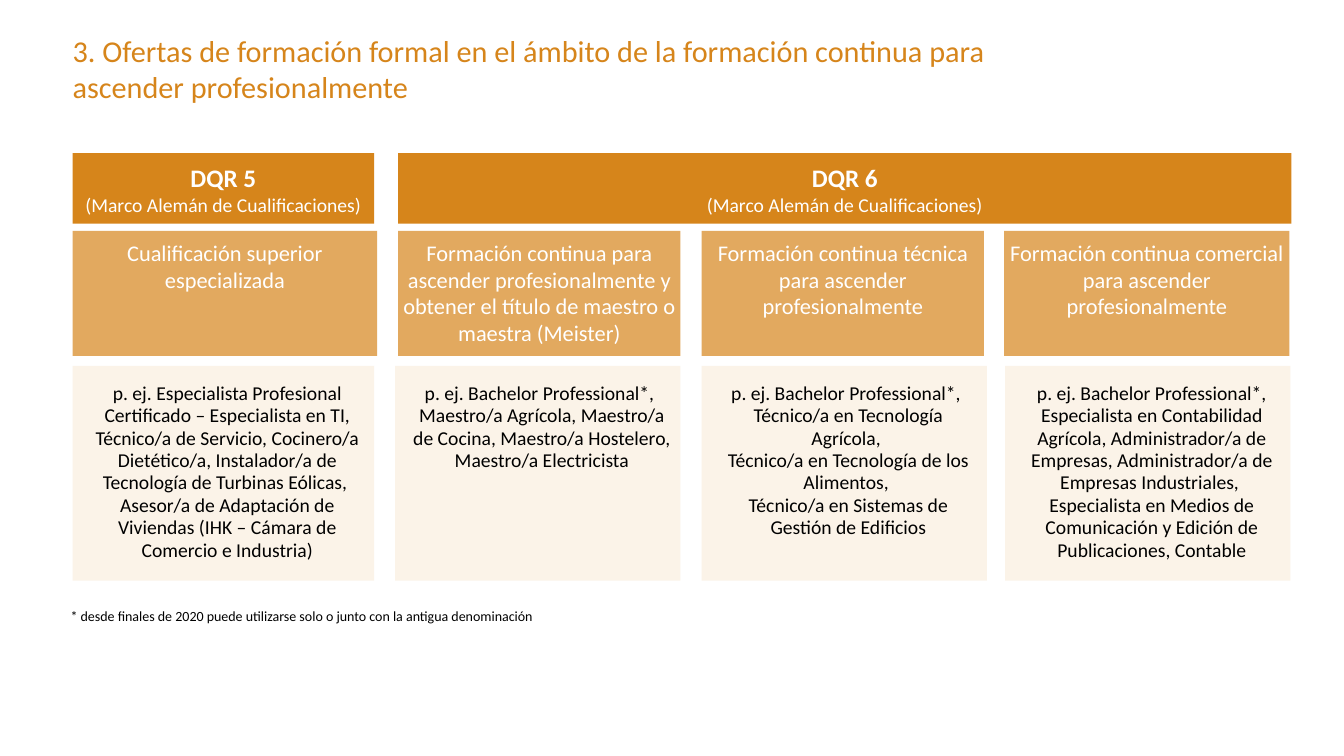
"""Builds the slide on formal training offers by DQR level."""
from pptx import Presentation
from pptx.dml.color import RGBColor
from pptx.enum.shapes import MSO_SHAPE
from pptx.enum.text import MSO_ANCHOR, PP_ALIGN
from pptx.util import Inches, Pt

RECT = MSO_SHAPE.RECTANGLE
TOP, MIDDLE = MSO_ANCHOR.TOP, MSO_ANCHOR.MIDDLE
LEFT, CENTER = PP_ALIGN.LEFT, PP_ALIGN.CENTER
ORANGE = RGBColor(0xD6, 0x85, 0x1B)
AMBER = RGBColor(0xE2, 0xA9, 0x5F)
CREAM = RGBColor(0xFB, 0xF3, 0xE8)
WHITE = RGBColor(0xFF, 0xFF, 0xFF)
BLACK = RGBColor(0, 0, 0)

TITLE = ("3. Ofertas de formación formal en el ámbito de la formación "
         "continua para ascender profesionalmente")
NOTE = ("* desde finales de 2020 puede utilizarse solo o junto con la "
        "antigua denominación")
LEVELS = [("DQR 5", 0.72, 2.99), ("DQR 6", 3.95, 8.86)]
FRAME = "(Marco Alemán de Cualificaciones)"
TRACKS = [
    ((0.72, 3.02), (0.72, 2.99),
     "Cualificación superior especializada",
     "p. ej. Especialista Profesional Certificado – Especialista en TI, "
     "Técnico/a de Servicio, Cocinero/a Dietético/a, Instalador/a de "
     "Tecnología de Turbinas Eólicas, \nAsesor/a de Adaptación de Viviendas "
     "(IHK – Cámara de Comercio e Industria)"),
    ((3.95, 2.8), (3.92, 2.83),
     "Formación continua para ascender profesionalmente y obtener el título "
     "de maestro o maestra (Meister)",
     "p. ej. Bachelor Professional*, \nMaestro/a Agrícola, Maestro/a de "
     "Cocina, Maestro/a Hostelero, Maestro/a Electricista"),
    ((6.96, 2.8), (6.96, 2.83),
     "Formación continua técnica para ascender profesionalmente",
     "p. ej. Bachelor Professional*, \nTécnico/a en Tecnología Agrícola, \n"
     "Técnico/a en Tecnología de los Alimentos, \n"
     "Técnico/a en Sistemas de Gestión de Edificios"),
    ((9.96, 2.83), (9.97, 2.83),
     "Formación continua comercial para ascender profesionalmente",
     "p. ej. Bachelor Professional*, Especialista en Contabilidad Agrícola, "
     "Administrador/a de Empresas, Administrador/a de Empresas Industriales, "
     "\nEspecialista en Medios de Comunicación y Edición de Publicaciones, "
     "Contable"),
]


def write(shape, text, size, color, inset, align=CENTER, anchor=TOP, pitch=None):
    """Put one paragraph into a shape and return its runs."""
    frame = shape.text_frame
    frame.word_wrap = True
    frame.vertical_anchor = anchor
    (frame.margin_left, frame.margin_top,
     frame.margin_right, frame.margin_bottom) = map(Inches, inset)
    para = frame.paragraphs[0]
    para.text = text
    para.alignment = align
    if pitch:
        para.line_spacing = Pt(pitch)
    for run in para.runs:
        run.font.name = "Calibri"
        run.font.size = Pt(size)
        run.font.color.rgb = color
    return para.runs


def panel(slide, box, fill):
    """Add a plain filled rectangle."""
    shape = slide.shapes.add_shape(RECT, *map(Inches, box))
    shape.shadow.inherit = False
    shape.fill.solid()
    shape.fill.fore_color.rgb = fill
    shape.line.fill.background()
    return shape


def label(slide, box, text, size, color, inset):
    """Add a left-aligned text box."""
    shape = slide.shapes.add_textbox(*map(Inches, box))
    write(shape, text, size, color, inset, LEFT)


def level(slide, box, name):
    """Add the bar that names a DQR level."""
    runs = write(panel(slide, box, ORANGE), f"{name}\n{FRAME}", 14, WHITE,
                 (0.04, 0.08, 0.04, 0), anchor=MIDDLE, pitch=17)
    runs[0].font.size = Pt(18)
    runs[0].font.bold = True


def track(slide, top, head, body, name, jobs):
    """Add a training track: its heading above its examples."""
    (left, width), (start, span) = head, body
    write(panel(slide, (left, top, width, 1.24), AMBER), name, 16, WHITE,
          (0.04, 0.08, 0.04, 0.08))
    write(panel(slide, (start, top + 1.34, span, 2.13), CREAM), jobs, 14, BLACK,
          (0.16, 0.16, 0.08, 0.16), pitch=16)


def main():
    """Build and save the slide."""
    deck = Presentation()
    deck.slide_width, deck.slide_height = Inches(13.33), Inches(7.5)
    slide = deck.slides.add_slide(deck.slide_layouts[6])
    label(slide, (0.72, 0.32, 9.84, 0.49), TITLE, 21.6, ORANGE, (0, 0, 0, 0))
    for name, left, width in LEVELS:
        level(slide, (left, 1.52, width, 0.7), name)
    for item in TRACKS:
        track(slide, 2.29, *item)
    label(slide, (0.57, 5.98, 8.14, 0.27), NOTE, 10, BLACK,
          (0.13, 0.05, 0.1, 0.05))
    deck.save("out.pptx")


if __name__ == "__main__":
    main()
